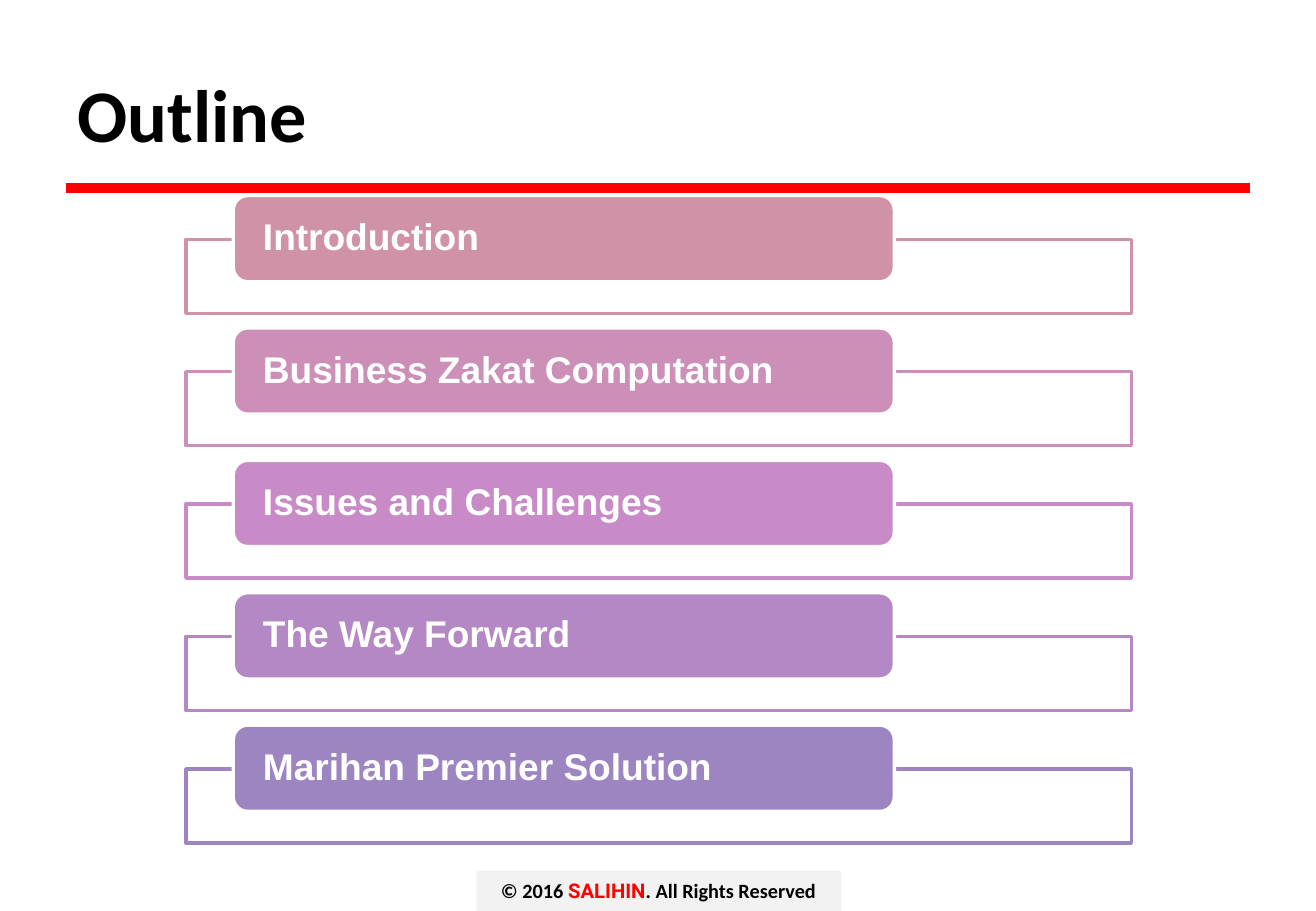
from dataclasses import dataclass

from lxml import etree
from pptx import Presentation
from pptx import util as u
from pptx.dml.color import RGBColor
from pptx.enum import shapes, text
from pptx.oxml.ns import qn


@dataclass(frozen=True)
class Theme:
    black: str = "000000"
    white: str = "FFFFFF"
    red: str = "FF0000"
    grey: str = "F2F2F2"
    head: int = 44
    item: int = 22
    foot: int = 12
    tints: tuple = ("D092A7", "CC8FB7", "C88BC7", "B388C4", "9C85C0")


theme = Theme()
kinds = shapes.MSO_SHAPE


def add_box(kind, left, top, width, height, fill, line=None):
    """Add a filled shape with centred-height text and an optional 2 pt outline."""
    box = slide.shapes.add_shape(
        kind, u.Inches(left), u.Inches(top), u.Inches(width), u.Inches(height))
    box.shadow.inherit = False
    box.fill.solid()
    box.fill.fore_color.rgb = RGBColor.from_string(fill)
    if line:
        box.line.color.rgb = RGBColor.from_string(line)
        box.line.width = u.Pt(2)
    else:
        box.line.fill.background()
    box.text_frame.word_wrap = True
    box.text_frame.vertical_anchor = text.MSO_ANCHOR.MIDDLE
    return box


def add_run(para, words, size, face, color):
    run = para.add_run()
    run.text = words
    run.font.size = u.Pt(size)
    run.font.name = face
    run.font.bold = True
    run.font.color.rgb = RGBColor.from_string(color)


deck = Presentation()
deck.slide_width = u.Inches(10.83)
deck.slide_height = u.Inches(7.5)
slide = deck.slides.add_slide(deck.slide_layouts[6])

# Footer
foot = add_box(kinds.RECTANGLE, 3.92, 7.17, 3, 0.33, theme.grey)
para = foot.text_frame.paragraphs[0]
para.alignment = text.PP_ALIGN.CENTER
for words, face, color in (
    ("© 2016 ", "Calibri", theme.black),
    ("SALIHIN", "Roboto", theme.red),
    (". All Rights Reserved", "Calibri", theme.black),
):
    add_run(para, words, theme.foot, face, color)

# Title and rule
rule = slide.shapes.add_connector(
    shapes.MSO_CONNECTOR.STRAIGHT,
    u.Inches(0.54), u.Inches(1.55), u.Inches(10.29), u.Inches(1.55))
rule.line.color.rgb = RGBColor.from_string(theme.red)
rule.line.width = u.Pt(6)
etree.SubElement(rule._element.spPr, qn("a:effectLst"))

title = slide.shapes.add_textbox(
    u.Inches(0.54), u.Inches(0.3), u.Inches(9.75), u.Inches(1.25))
title.text_frame.word_wrap = True
title.text_frame.vertical_anchor = text.MSO_ANCHOR.MIDDLE
add_run(title.text_frame.paragraphs[0], "Outline", theme.head, "Calibri", theme.black)

# Agenda: a framed bar with a label on its top edge
topics = (
    "Introduction",
    "Business Zakat Computation",
    "Issues and Challenges",
    "The Way Forward",
    "Marihan Premier Solution",
)
first, pitch = 1.61, 1.09
for i, (topic, tint) in enumerate(zip(topics, theme.tints)):
    top = first + i * pitch
    add_box(kinds.RECTANGLE, 1.53, top + 0.36, 7.78, 0.61, theme.white, tint)
    label = add_box(kinds.ROUNDED_RECTANGLE, 1.92, top, 5.44, 0.71, tint, theme.white)
    frame = label.text_frame
    frame.margin_left = frame.margin_right = u.Inches(0.21)
    frame.margin_top = frame.margin_bottom = 0
    para = frame.paragraphs[0]
    para.alignment = text.PP_ALIGN.LEFT
    para.line_spacing = 0.9
    add_run(para, topic, theme.item, "Arial", theme.white)

deck.save("out.pptx")
